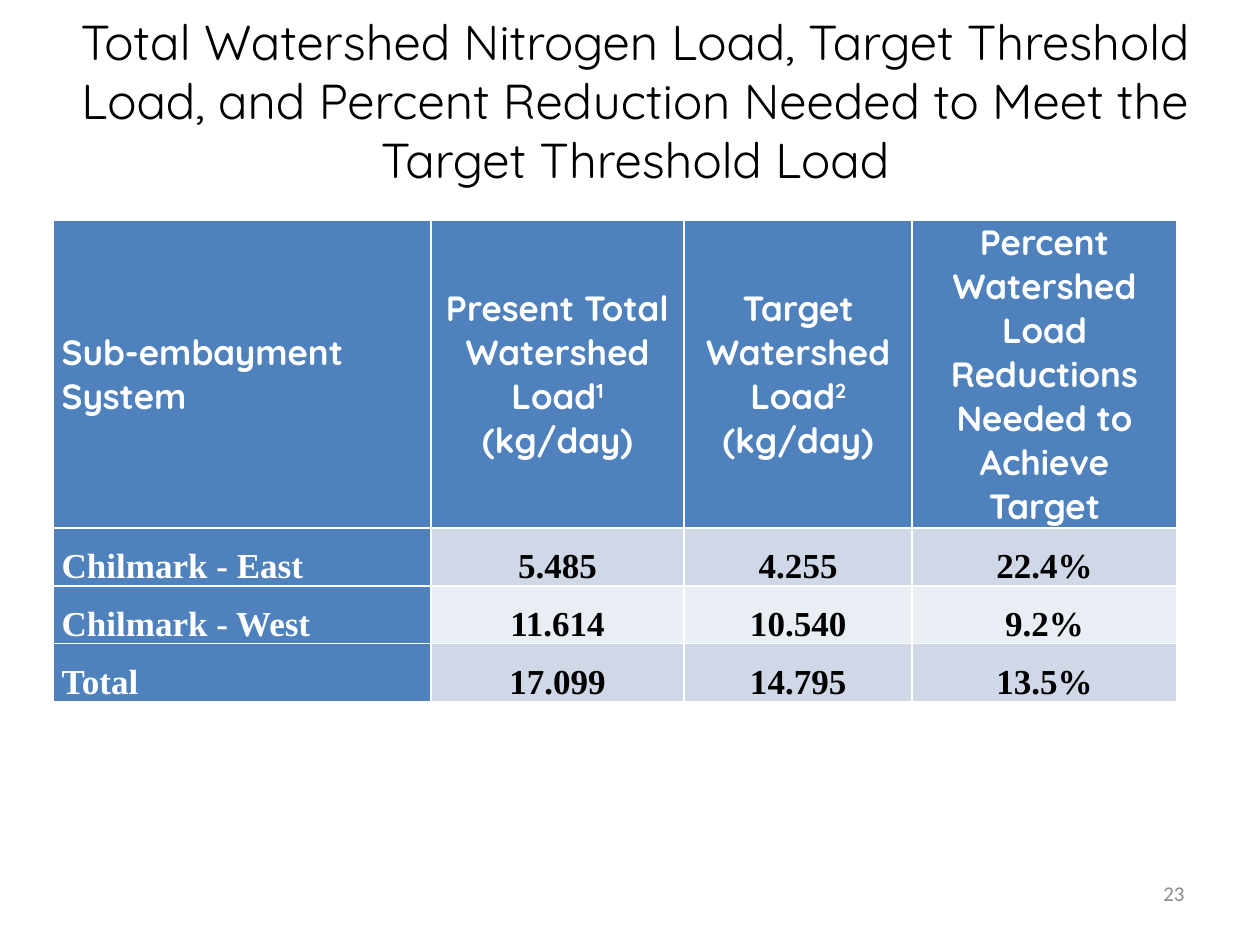
from dataclasses import dataclass

from pptx import Presentation
from pptx.dml.color import RGBColor as Color
from pptx.enum.text import MSO_ANCHOR as Anchor, MSO_AUTO_SIZE as AutoSize, PP_ALIGN as Align
from pptx.util import Inches, Pt


@dataclass(frozen=True)
class Theme:
    heading_font: str = "Quicksand"
    data_font: str = "Times New Roman"
    number_font: str = "Calibri"
    title_size: int = 28
    table_size: int = 20
    number_size: int = 12
    black: str = "000000"
    white: str = "FFFFFF"
    gray: str = "8C8C8C"
    blue: str = "4F81BD"
    bands: tuple = ("D0D8E8", "E9EDF4")


theme = Theme()


def style_text(frame, font, size, color, align, anchor, bold=False):
    frame.word_wrap = True
    frame.vertical_anchor = anchor
    for para in frame.paragraphs:
        para.alignment = align
        for span in para.runs:
            span.font.name = font
            span.font.size = Pt(size)
            span.font.bold = bold
            span.font.color.rgb = Color.from_string(color)


deck = Presentation()
deck.slide_width, deck.slide_height = Inches(10), Inches(7.5)
width, height = deck.slide_width, deck.slide_height
page = deck.slides.add_slide(deck.slide_layouts[5])

title = page.shapes.title
title.left, title.top = Inches(0.04), Inches(0.17)
title.width, title.height = width, height // 6
title.text_frame.text = (
    "Total Watershed Nitrogen Load, Target Threshold Load, and Percent "
    "Reduction Needed to Meet the Target Threshold Load"
)
title.text_frame.auto_size = AutoSize.NONE
style_text(title.text_frame, theme.heading_font, theme.title_size,
           theme.black, Align.CENTER, Anchor.MIDDLE)

headers = [
    ("Sub-embayment System",),
    ("Present Total Watershed Load", "1", " (kg/day)"),
    ("Target Watershed Load", "2", " (kg/day)"),
    ("Percent Watershed Load Reductions Needed to Achieve Target",),
]
loads = [
    ("Chilmark - East", "5.485", "4.255", "22.4%"),
    ("Chilmark - West", "11.614", "10.540", "9.2%"),
    ("Total", "17.099", "14.795", "13.5%"),
]
column_widths = [3, 2.01, 1.81, 2.1]
row_heights = [2.07] + [0.46] * len(loads)

table = page.shapes.add_table(
    len(row_heights), len(column_widths), Inches(0.42), Inches(1.75),
    Inches(sum(column_widths)), Inches(sum(row_heights)),
).table
table.first_col = True
for column, size in zip(table.columns, column_widths):
    column.width = Inches(size)
for row, size in zip(table.rows, row_heights):
    row.height = Inches(size)

rows = [headers] + [[(text,) for text in load] for load in loads]
for row_index, row in enumerate(rows):
    for column_index, parts in enumerate(row):
        is_header, is_label = row_index == 0, column_index == 0
        on_blue = is_header or is_label
        cell = table.cell(row_index, column_index)
        cell.margin_left = cell.margin_right = Inches(0.07)
        cell.margin_top = cell.margin_bottom = 0
        cell.fill.solid()
        cell.fill.fore_color.rgb = Color.from_string(
            theme.blue if on_blue else theme.bands[(row_index - 1) % 2])
        for part in parts:
            span = cell.text_frame.paragraphs[0].add_run()
            span.text = part
            if part.isdigit():
                span.font._element.set("baseline", "30000")
        style_text(cell.text_frame,
                   theme.heading_font if is_header else theme.data_font,
                   theme.table_size,
                   theme.white if on_blue else theme.black,
                   Align.LEFT if is_label else Align.CENTER,
                   Anchor.MIDDLE if is_header else Anchor.BOTTOM, bold=True)
        cell.vertical_anchor = Anchor.MIDDLE if is_header else Anchor.BOTTOM

number = page.shapes.add_textbox(Inches(7.17), Inches(6.83), Inches(2.33), Inches(0.52))
number.text_frame.text = "23"
style_text(number.text_frame, theme.number_font, theme.number_size,
           theme.gray, Align.RIGHT, Anchor.MIDDLE)

deck.save("out.pptx")
